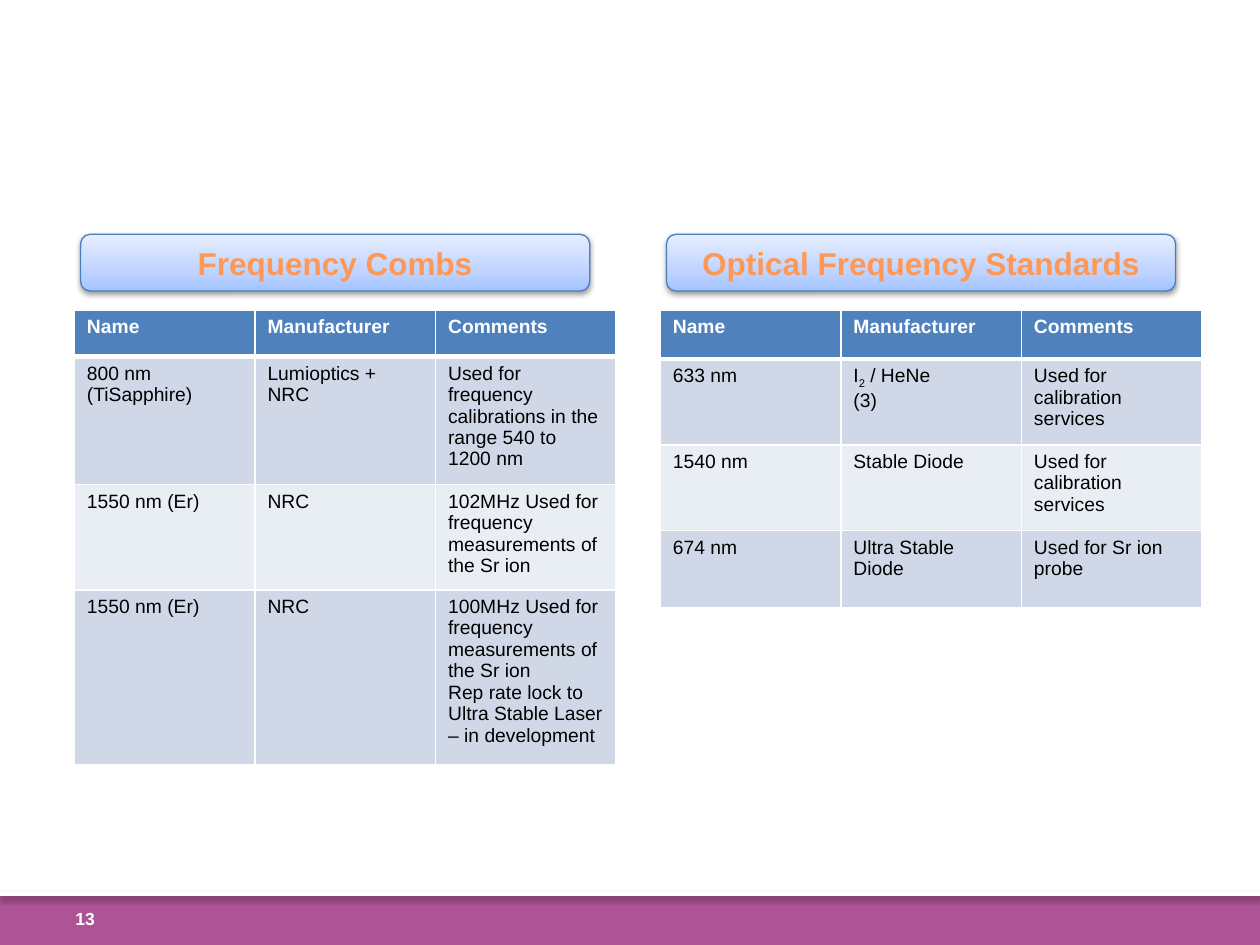
from lxml import etree
from pptx import Presentation
from pptx.dml.color import RGBColor
from pptx.enum import shapes, text
from pptx.oxml.ns import qn
from pptx.util import Pt

COLORS = {
    "white": "FFFFFF", "black": "000000", "footer": "AC5494", "header": "4F81BD",
    "band_dark": "D0D8E8", "band_light": "E9EDF4", "outline": "4B7EBC",
}
BOX_STOPS = [(0, "A4C4FF"), (35, "BFD4FF"), (100, "E6EEFF")]
TITLE_STOPS = [(0, "9D4700"), (78, "FF9856"), (100, "FFF5F1")]
HEADER = ["Name", "Manufacturer", "Comments"]
PANELS = [
    ("Frequency Combs", [26.6, 41.8, 41.8, 41.8], [
        HEADER,
        ["800 nm (TiSapphire)", "Lumioptics + NRC",
         "Used for frequency calibrations in the range 540 to 1200 nm"],
        ["1550 nm (Er)", "NRC", "102MHz Used for frequency measurements of the Sr ion"],
        ["1550 nm (Er)", "NRC", "100MHz Used for frequency measurements of the Sr ion\n"
         "Rep rate lock to Ultra Stable Laser – in development"],
    ]),
    ("Optical Frequency Standards", [28.1, 49, 49, 43.9], [
        HEADER,
        ["633 nm", "I~2~ / HeNe\n(3)", "Used for calibration services"],
        ["1540 nm", "Stable Diode", "Used for calibration services"],
        ["674 nm", "Ultra Stable Diode", "Used for Sr ion probe"],
    ]),
]


def rgb(name):
    return RGBColor.from_string(COLORS[name])


def sub(parent, tag, **attrs):
    return etree.SubElement(parent, qn(tag), {k: str(v) for k, v in attrs.items()})


def set_gradient(fill, element, stops, angle):
    """Fill an element with colour stops at an angle."""
    fill.gradient()
    grad = next(element.iter(qn("a:gradFill")))
    for child in list(grad):
        grad.remove(child)
    stop_list = sub(grad, "a:gsLst")
    for pos, color in stops:
        sub(sub(stop_list, "a:gs", pos=pos * 1000), "a:srgbClr", val=color)
    sub(grad, "a:lin", ang=angle * 60000, scaled=0)


def write(tf, content, size=11, color="black", bold=False, align=None, stops=None):
    """Write newline-separated paragraphs, with subscripts between tildes."""
    for i, line in enumerate(content.split("\n")):
        p = tf.add_paragraph() if i else tf.paragraphs[0]
        p.alignment = align
        for j, piece in enumerate(line.split("~")):
            r = p.add_run()
            r.text = piece
            r.font.name, r.font.size, r.font.bold = "Arial", Pt(size), bold
            if stops:
                set_gradient(r.font.fill, r._r, stops, 90)
            else:
                r.font.color.rgb = rgb(color)
            if j % 2:
                r._r.get_or_add_rPr().set("baseline", "-25000")


class Deck:
    """Hold the style and the current slide."""

    def __init__(self, prs):
        self.s = prs.slides.add_slide(prs.slide_layouts[6])

    def shape(self, kind, box, fill=None, shadow=None):
        sp = self.s.shapes.add_shape(kind, *map(Pt, box))
        sp.shadow.inherit = False
        sp.line.fill.background()
        if fill:
            sp.fill.solid()
            sp.fill.fore_color.rgb = rgb(fill)
        if shadow:
            alpha, blur, dist = shadow
            effects = sp._element.spPr.find(qn("a:effectLst"))
            outer = sub(effects, "a:outerShdw", blurRad=Pt(blur), dist=Pt(dist),
                        dir=90 * 60000, rotWithShape=0)
            sub(sub(outer, "a:srgbClr", val=COLORS["black"]), "a:alpha", val=alpha * 1000)
        return sp

    def heading(self, content, box):
        sp = self.shape(shapes.MSO_SHAPE.ROUNDED_RECTANGLE, box, shadow=(38, 3.1, 1.6))
        set_gradient(sp.fill, sp._element.spPr, BOX_STOPS, 270)
        sp.line.color.rgb = rgb("outline")
        sp.line.width = Pt(0.75)
        tf = sp.text_frame
        tf.word_wrap = True
        tf.auto_size = text.MSO_AUTO_SIZE.SHAPE_TO_FIT_TEXT
        write(tf, content, size=18, bold=True, align=text.PP_ALIGN.CENTER, stops=TITLE_STOPS)

    def label(self, content, box):
        tf = self.s.shapes.add_textbox(*map(Pt, box)).text_frame
        tf.word_wrap = True
        tf.vertical_anchor = text.MSO_ANCHOR.MIDDLE
        write(tf, content, size=10, color="white", bold=True)

    def borders(self, cell, top, bottom):
        tc_pr = cell._tc.get_or_add_tcPr()
        widths = {"a:lnL": 1, "a:lnR": 1, "a:lnT": top, "a:lnB": bottom}
        for i, (tag, width) in enumerate(widths.items()):
            ln = sub(tc_pr, tag, w=Pt(width))
            sub(sub(ln, "a:solidFill"), "a:srgbClr", val=COLORS["white"])
            tc_pr.insert(i, ln)

    def table(self, rows, heights, left, top, width):
        size = len(rows), len(rows[0])
        box = map(Pt, (left, top, width, sum(heights)))
        tbl = self.s.shapes.add_table(*size, *box).table
        for col in tbl.columns:
            col.width = Pt(width / size[1])
        for i, (row, height) in enumerate(zip(rows, heights)):
            tbl.rows[i].height = Pt(height)
            fill = "header" if i == 0 else "band_dark" if i % 2 else "band_light"
            for j, content in enumerate(row):
                cell = tbl.cell(i, j)
                cell.fill.solid()
                cell.fill.fore_color.rgb = rgb(fill)
                self.borders(cell, top=3 if i == 1 else 1, bottom=1 if i else 3)
                write(cell.text_frame, content, color="black" if i else "white", bold=i == 0)


def main():
    prs = Presentation()
    prs.slide_width, prs.slide_height = Pt(720), Pt(540)
    deck = Deck(prs)
    rect = shapes.MSO_SHAPE.RECTANGLE
    deck.shape(rect, (0, 509.8, 720, 30.2), "footer")
    deck.shape(rect, (0, 509.8, 720, 2.2), "white", shadow=(35, 3.1, 1.8))
    deck.label("13", (36, 509.8, 60, 30.2))
    for i, (title, heights, rows) in enumerate(PANELS):
        shift = i * 334.8
        deck.table(rows, heights, 42.5 + shift, 177.1, 309.6)
        deck.heading(title, (46.1 + shift, 133.9, 290.9, 32.4))
    prs.save("out.pptx")


if __name__ == "__main__":
    main()
